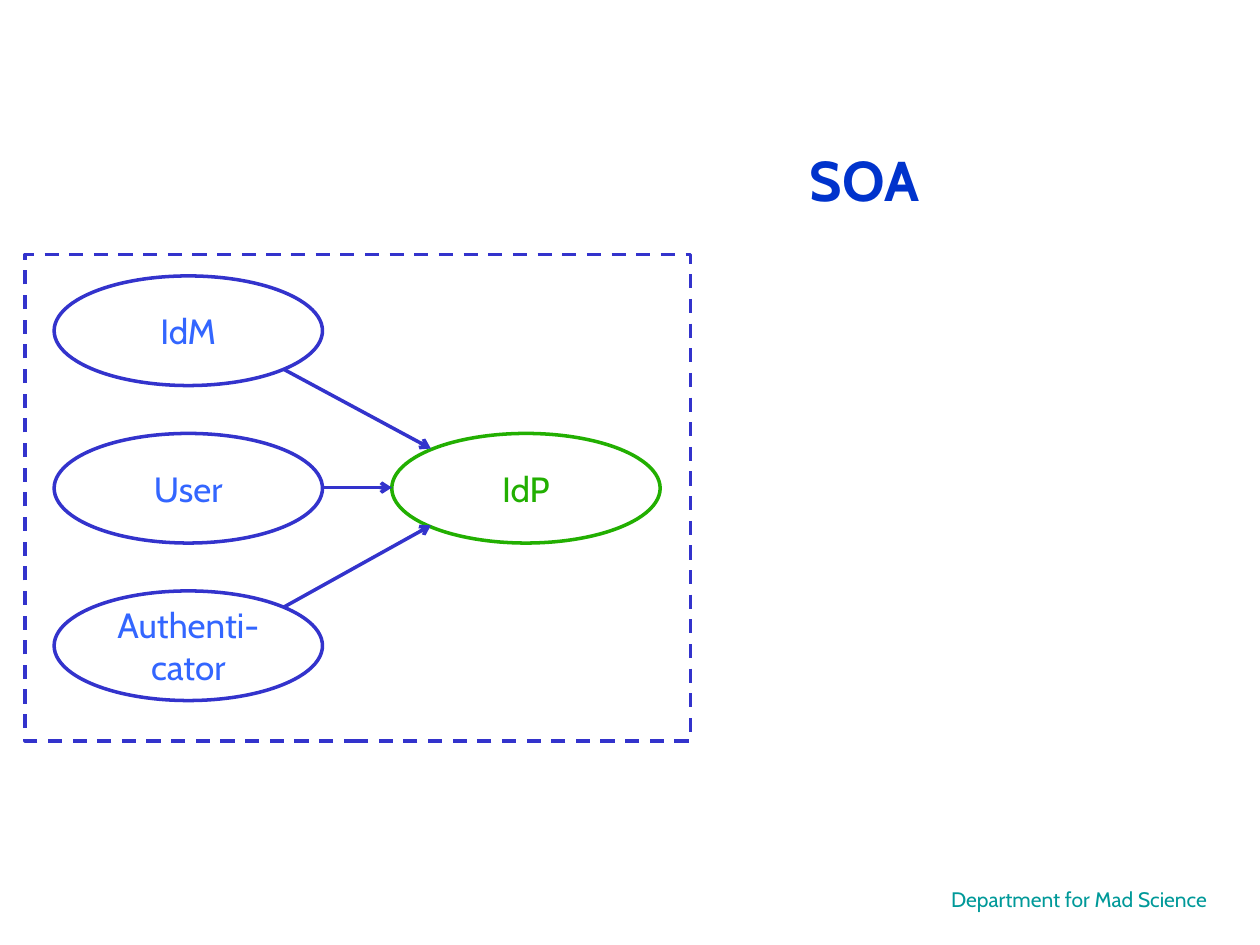
from lxml import etree
from pptx import Presentation
from pptx.dml.color import RGBColor
from pptx.enum.dml import MSO_LINE_DASH_STYLE as Dash
from pptx.enum.shapes import MSO_CONNECTOR as Connector, MSO_SHAPE as Shape
from pptx.enum.text import MSO_ANCHOR as Anchor, PP_ALIGN as Align
from pptx.oxml.ns import qn
from pptx.util import Inches, Pt

FONT = "Cabin"
WHITE = RGBColor(0xFF, 0xFF, 0xFF)
INDIGO = RGBColor(0x33, 0x33, 0xCC)
SKY = RGBColor(0x33, 0x66, 0xFF)
GREEN = RGBColor(0x22, 0xAF, 0x01)
NAVY = RGBColor(0x00, 0x33, 0xCC)
TEAL = RGBColor(0x00, 0x99, 0x99)

NODE_WIDTH, NODE_HEIGHT = 2.13, 0.87
SOURCE_LEFT, PROVIDER_LEFT = 0.43, 3.11
ROW_TOP, ROW_STEP = 2.19, 1.25
SOURCES = ["IdM", "User", "Authenti-cator"]
ARROWS = [
    ((2.25, 2.93), (3.42, 3.56)),
    ((2.56, 3.87), (3.11, 3.87)),
    ((2.25, 4.82), (3.42, 4.17)),
]


def write_text(frame, text, *, size, color, bold=False, anchor=Anchor.MIDDLE):
    frame.word_wrap = True
    frame.vertical_anchor = anchor
    para = frame.paragraphs[0]
    para.alignment = Align.CENTER
    span = para.add_run()
    span.text = text
    span.font.name = FONT
    span.font.size = Pt(size)
    span.font.bold = bold
    span.font.color.rgb = color


def add_label(page, text, left, top, width, height, **text_format):
    box = page.shapes.add_textbox(
        Inches(left), Inches(top), Inches(width), Inches(height))
    write_text(box.text_frame, text, **text_format)


def add_outline(page, kind, left, top, width, height, color):
    """Add a white shape with a coloured outline."""
    shape = page.shapes.add_shape(
        kind, Inches(left), Inches(top), Inches(width), Inches(height))
    shape.shadow.inherit = False
    shape.fill.solid()
    shape.fill.fore_color.rgb = WHITE
    shape.line.color.rgb = color
    shape.line.width = Pt(2)
    return shape


def add_node(page, text, left, top, line_color, text_color):
    node = add_outline(
        page, Shape.OVAL, left, top, NODE_WIDTH, NODE_HEIGHT, line_color)
    write_text(node.text_frame, text, size=20, color=text_color)


def add_arrow(page, start, end):
    arrow = page.shapes.add_connector(
        Connector.STRAIGHT, *(Inches(value) for value in start + end))
    arrow.line.color.rgb = INDIGO
    arrow.line.width = Pt(2)
    etree.SubElement(arrow.line._get_or_add_ln(), qn("a:tailEnd"), type="arrow")
    etree.SubElement(arrow._element.spPr, qn("a:effectLst"))


def main():
    deck = Presentation()
    deck.slide_width, deck.slide_height = Inches(10), Inches(7.5)
    page = deck.slides.add_slide(deck.slide_layouts[6])

    add_label(page, "Department for Mad Science", 7.13, 6.99, 2.87, 0.3,
              size=12, color=TEAL, anchor=Anchor.TOP)
    frame = add_outline(page, Shape.RECTANGLE, 0.2, 2.02, 5.28, 3.86, INDIGO)
    frame.line.dash_style = Dash.DASH
    add_label(page, "SOA", 3.9, 0.84, 5.92, 1.17,
              size=32, color=NAVY, bold=True)

    for row, name in enumerate(SOURCES):
        add_node(page, name, SOURCE_LEFT, ROW_TOP + row * ROW_STEP, INDIGO, SKY)
    add_node(page, "IdP", PROVIDER_LEFT, ROW_TOP + ROW_STEP, GREEN, GREEN)

    for start, end in ARROWS:
        add_arrow(page, start, end)

    deck.save("out.pptx")


if __name__ == "__main__":
    main()
